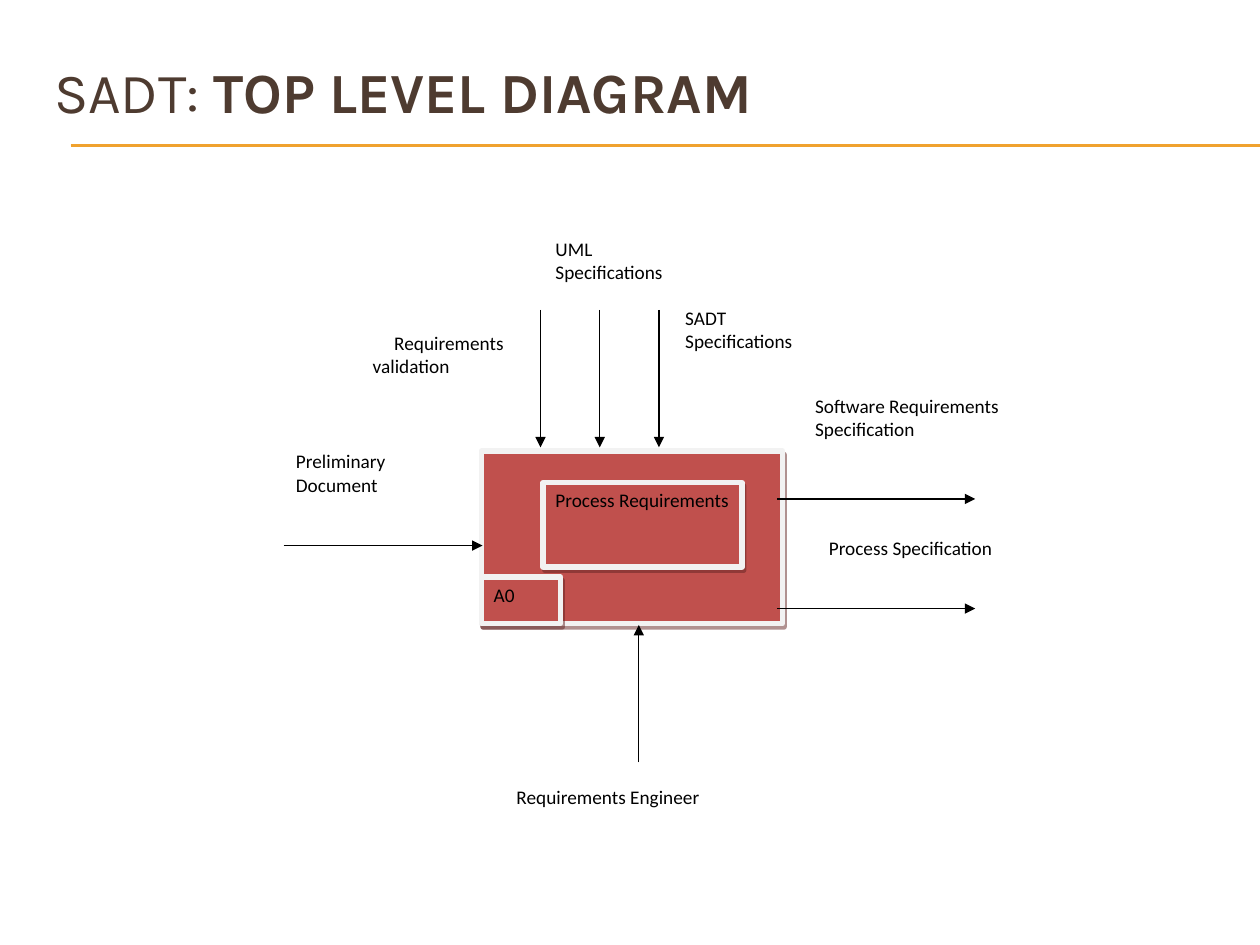
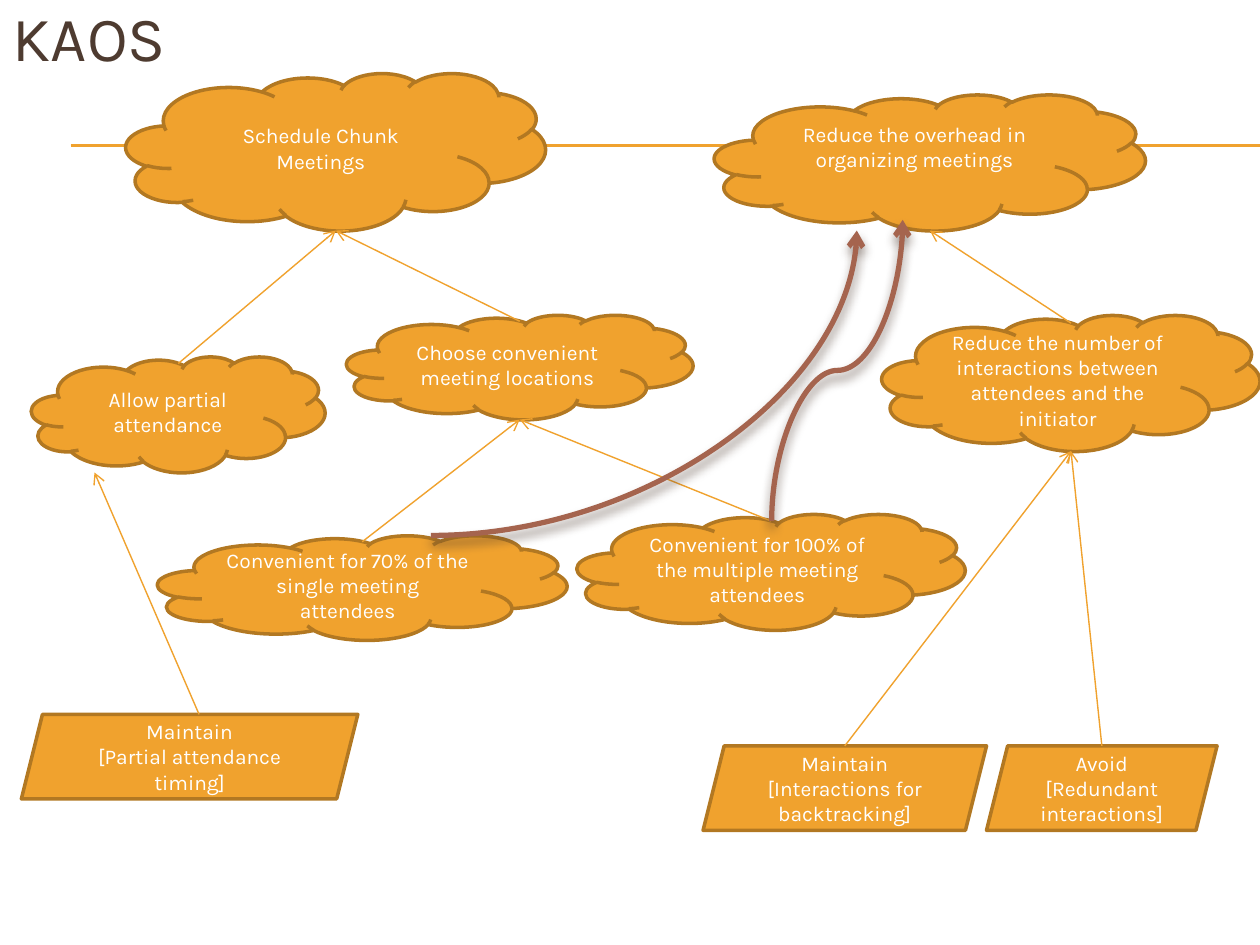
from lxml.etree import SubElement
from pptx import Presentation
from pptx.dml.color import RGBColor
from pptx.enum.shapes import MSO_CONNECTOR, MSO_SHAPE
from pptx.enum.text import MSO_ANCHOR, MSO_AUTO_SIZE, PP_ALIGN
from pptx.oxml.ns import qn
from pptx.util import Inches, Pt

COLORS = {
    "gold": "F0A22E", "edge": "B27822", "brown": "4E3B30", "rust": "A5644E",
    "red": "C0504D", "frame": "F2F2F2", "shade": "622423",
    "white": "FFFFFF", "black": "000000",
}
TITLE_FONT, GOAL_FONT, LABEL_FONT = "Karla", "Karla", "Calibri"
# Shadow: color, opacity %, blur pt, distance pt, angle
BOX_SHADOW = ("shade", 50, 0, 2.2, 63)
CURVE_SHADOW = ("brown", 60, 6, 4, 90)


def rgb(name):
    return RGBColor.from_string(COLORS[name])


def cast(item, shadow=None):
    """Replace the theme shadow with the given one, or with none."""
    props = item._element.spPr
    effects = props.find(qn("a:effectLst"))
    if effects is None:
        effects = SubElement(props, qn("a:effectLst"))
    if shadow:
        color, alpha, blur, dist, angle = shadow
        outer = SubElement(effects, qn("a:outerShdw"), blurRad=str(Pt(blur)),
                           dist=str(Pt(dist)), dir=str(angle * 60000),
                           algn="ctr", rotWithShape="0")
        tint = SubElement(outer, qn("a:srgbClr"), val=COLORS[color])
        SubElement(tint, qn("a:alpha"), val=str(alpha * 1000))


def style(wire, color, width, head=None, shadow=None):
    """Color a connector and set its arrowhead."""
    wire.line.color.rgb = rgb(color)
    wire.line.width = Pt(width)
    if head:
        SubElement(wire.line._get_or_add_ln(), qn("a:tailEnd"), type=head)
    cast(wire, shadow)


def wire(shapes, start, end, color, width, head=None, shadow=None,
         kind=MSO_CONNECTOR.STRAIGHT):
    ends = [Inches(v) for v in (*start, *end)]
    item = shapes.add_connector(kind, *ends)
    style(item, color, width, head, shadow)
    return item


def block(shapes, kind, box, fill, edge=None, width=0, shadow=None):
    """Add a filled preset shape."""
    item = shapes.add_shape(kind, *[Inches(v) for v in box])
    item.shadow.inherit = False
    item.fill.solid()
    item.fill.fore_color.rgb = rgb(fill)
    if edge:
        item.line.color.rgb = rgb(edge)
        item.line.width = Pt(width)
    else:
        item.line.fill.background()
    cast(item, shadow)
    return item


def write(item, text, font, size, color, align, anchor):
    frame = item.text_frame
    frame.word_wrap = True
    frame.vertical_anchor = anchor
    frame.text = text
    for para in frame.paragraphs:
        para.alignment = align
        para.font.name = font
        para.font.size = Pt(size)
        para.font.color.rgb = rgb(color)
    return frame


def start(deck, box, size, anchor, plain, strong=""):
    """Add a slide with its title and the double gold rule."""
    slide = deck.slides.add_slide(deck.slide_layouts[5])
    title = slide.shapes.title
    title.left, title.top, title.width, title.height = map(Inches, box)
    frame = write(title, plain, TITLE_FONT, size, "brown", PP_ALIGN.LEFT, anchor)
    frame.auto_size = MSO_AUTO_SIZE.NONE
    if strong:
        run = frame.paragraphs[0].add_run()
        run.text = strong
        run.font.bold = True
    for y in (1.15, 1.16):
        wire(slide.shapes, (0.56, y), (10, y), "gold", 0.75)
    return slide


def sadt(deck):
    slide = start(deck, (0.33, 0.45, 9.5, 0.92), 32.4, MSO_ANCHOR.TOP,
                  "SADT: ", "TOP LEVEL DIAGRAM")
    slide.shapes.title.text_frame.margin_top = 0
    diagram(slide.shapes.add_group_shape().shapes, 2.25, 1.83)


def diagram(shapes, left, top):
    """Place the process box, its arrows and their labels."""
    def put(text, x, y, w, h, *look):
        item = block(shapes, MSO_SHAPE.RECTANGLE, (left + x, top + y, w, h), *look)
        return write(item, text, LABEL_FONT, 11, "black", PP_ALIGN.LEFT, MSO_ANCHOR.TOP)

    # Process boxes
    for text, *box in [
        ("", 1.57, 1.75, 2.39, 1.37),
        ("Process Requirements", 2.06, 2, 1.58, 0.67),
        ("A0", 1.57, 2.75, 0.63, 0.37),
    ]:
        put(text, *box, "red", "frame", 3, BOX_SHADOW)

    # Controls come from above, outputs leave right, then input and mechanism
    flows = [(2.04 + 0.47 * i, 0.63, 2.04 + 0.47 * i, 1.72) for i in range(3)]
    flows += [(3.92, y, 5.49, y) for y in (2.13, 3)]
    flows += [(0, 2.5, 1.58, 2.5), (2.82, 4.22, 2.82, 3.13)]
    for x1, y1, x2, y2 in flows:
        wire(shapes, (left + x1, top + y1), (left + x2, top + y2),
             "black", 0.75, "triangle")

    # Labels
    for text, *box in [
        ("Preliminary Document", 0, 1.69, 1.25, 0.62),
        ("Requirements Engineer", 1.75, 4.35, 2.69, 0.62),
        ("Software Requirements Specification", 4.12, 1.25, 2.05, 0.75),
        ("Process Specification", 4.23, 2.38, 1.57, 0.5),
        ("UML Specifications", 2.06, 0, 1.35, 0.55),
        ("SADT Specifications", 3.09, 0.55, 1.34, 0.76),
    ]:
        put(text, *box, "white")
    frame = put("Requirements validation", 0.61, 0.75, 1.35, 0.76, "white")
    frame.paragraphs[0]._p.get_or_add_pPr().set("indent", str(Inches(0.17)))


def kaos(deck):
    slide = start(deck, (0, -0.17, 9.5, 0.92), 36, MSO_ANCHOR.MIDDLE, "KAOS")
    goals(slide.shapes)


def goals(shapes):
    """Place the goal clouds, the requirements and the links between them."""
    clouds = {
        "plan": ("Schedule Chunk Meetings", (1, 0.58, 3.33, 1.25)),
        "cost": ("Reduce the overhead in organizing meetings", (5.67, 0.75, 3.42, 1.08)),
        "place": ("Choose convenient meeting locations", (2.75, 2.5, 2.75, 0.83)),
        "part": ("Allow partial attendance", (0.25, 2.83, 2.33, 0.92)),
        "most": ("Convenient for 70% of the single meeting attendees",
                 (1.25, 4.25, 3.25, 0.83)),
        "all": ("Convenient for 100% of the multiple meeting attendees",
                (4.58, 4.08, 3.08, 0.92)),
        "talk": ("Reduce the number of interactions between attendees and the initiator",
                 (7, 2.5, 3, 1.08)),
    }
    needs = {
        "timing": ("Maintain\n[Partial attendance timing]", (0.17, 5.67, 2.67, 0.67)),
        "avoid": ("Avoid\n[Redundant interactions]", (7.83, 5.92, 1.83, 0.67)),
        "track": ("Maintain\n[Interactions for backtracking]", (5.58, 5.92, 2.25, 0.67)),
    }
    frames, tops, feet = {}, {}, {}
    # Cloud outlines begin a little below the top of their box
    for kind, group, dip in [(MSO_SHAPE.CLOUD, clouds, 0.06),
                             (MSO_SHAPE.PARALLELOGRAM, needs, 0)]:
        for key, (text, box) in group.items():
            x, y, w, h = box
            item = block(shapes, kind, box, "gold", "edge", 2)
            frames[key] = write(item, text, GOAL_FONT, 12, "white",
                                PP_ALIGN.CENTER, MSO_ANCHOR.MIDDLE)
            tops[key] = (x + w / 2, y + dip * h)
            feet[key] = (x + w / 2, y + h)
    frames["cost"].margin_bottom = Inches(0.25)

    # Refinement links run from child to parent
    links = [(tops[child], feet[parent]) for child, parent in [
        ("part", "plan"), ("place", "plan"), ("talk", "cost"), ("most", "place"),
        ("all", "place"), ("track", "talk"), ("avoid", "talk")]]
    links.append(((1.58, 5.67), (0.75, 3.75)))
    for child, parent in links:
        wire(shapes, child, parent, "gold", 0.79, "arrow")

    # Curved contributions to the overhead goal
    look = ("rust", 3, "arrow", CURVE_SHADOW, MSO_CONNECTOR.CURVE)
    bow = wire(shapes, (3.42, 4.25), (6.8, 1.83), *look)
    bow._element.spPr.find(qn("a:prstGeom")).set("prst", "curvedConnector2")
    bend = wire(shapes, (7.84, 3.46), (5.45, 2.42), *look)
    bend._element.spPr.find(qn("a:xfrm")).set("rot", str(90 * 60000))


def main():
    deck = Presentation()
    deck.slide_width, deck.slide_height = Inches(10), Inches(7.5)
    sadt(deck)
    kaos(deck)
    deck.save("out.pptx")


if __name__ == "__main__":
    main()
